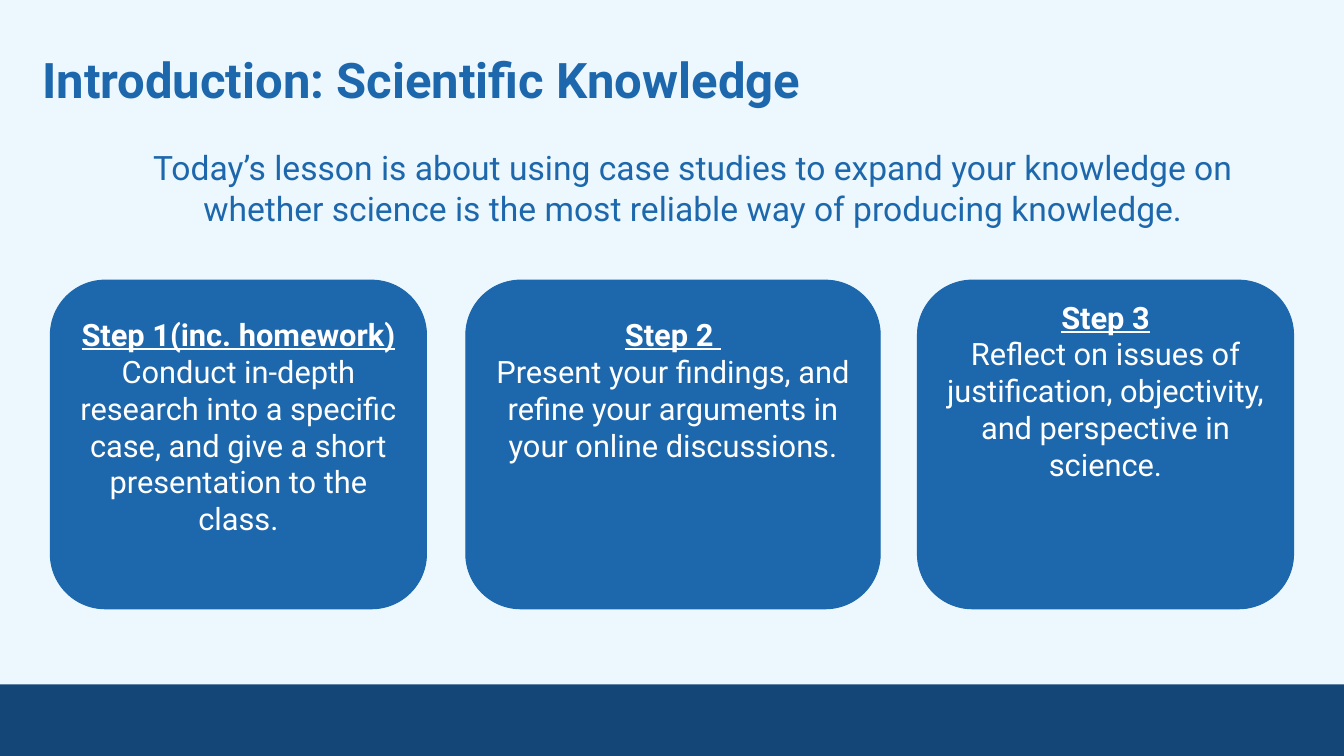
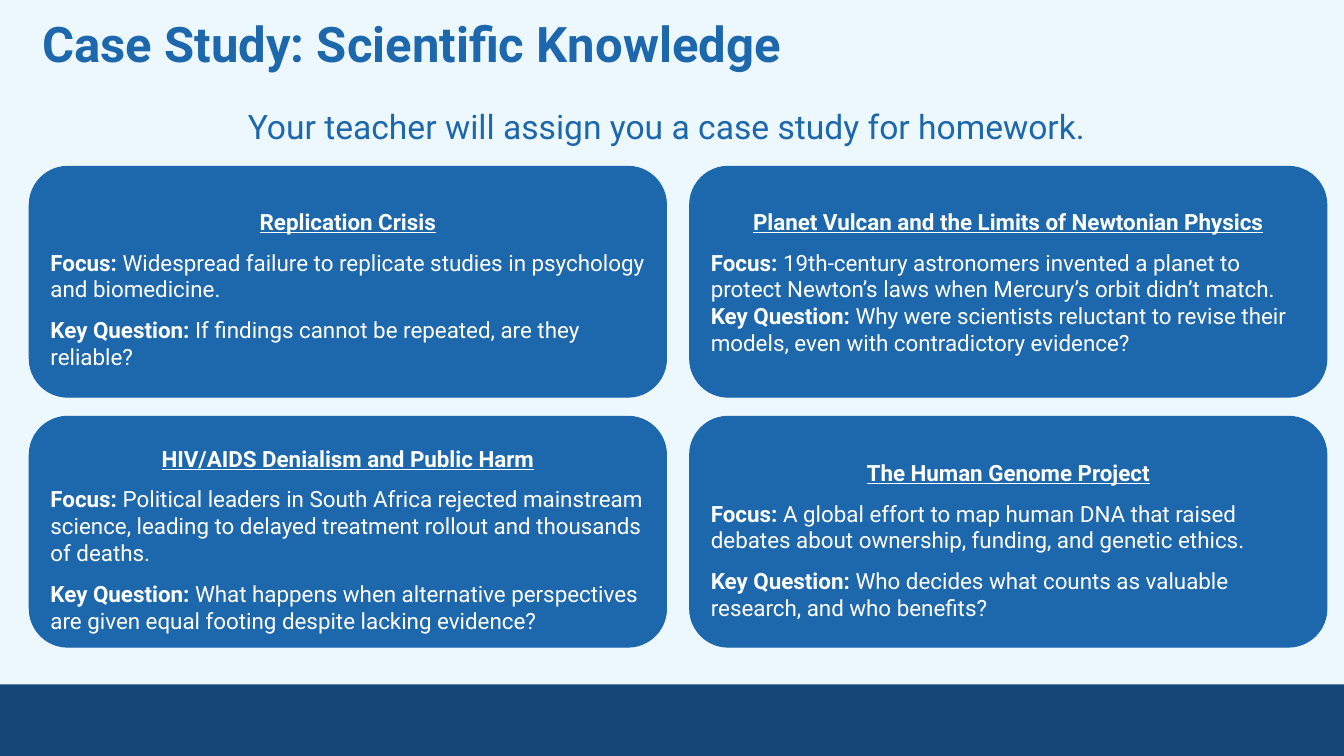
from pptx import Presentation
from pptx.dml.color import RGBColor
from pptx.enum.shapes import MSO_SHAPE as Shape
from pptx.enum.text import MSO_ANCHOR as Anchor, MSO_AUTO_SIZE as AutoSize, PP_ALIGN as Align
from pptx.util import Inches, Pt

FONT = "Roboto"
COLORS = {name: RGBColor.from_string(value) for name, value in {
    "background": "ECF8FE", "blue": "1D67AC", "band": "144777", "white": "FFFFFF",
}.items()}
MARGIN = Inches(0.1)

STEPS = [  # left, width, top inset, heading, text
    (0.5, 3.73, 0.19, "Step 1(inc. homework)",
     "Conduct in-depth research into a specific case, and give a short presentation to the class."),
    (4.62, 4.11, 0.19, "Step 2 ",
     "Present your findings, and refine your arguments in your online discussions."),
    (9.1, 3.73, 0.02, "Step 3",
     "Reflect on issues of justification, objectivity, and perspective in science."),
]

CASES = [  # top inset, space before the question, heading, focus, key question
    (0.3, 10, "Replication Crisis",
     "Widespread failure to replicate studies in psychology and biomedicine.",
     "If findings cannot be repeated, are they reliable?"),
    (0.3, 0, "Planet Vulcan and the Limits of Newtonian Physics",
     "19th-century astronomers invented a planet to protect Newton’s laws "
     "when Mercury’s orbit didn’t match.",
     "Why were scientists reluctant to revise their models, even with contradictory evidence?"),
    (0.17, 10, "HIV/AIDS Denialism and Public Harm",
     "Political leaders in South Africa rejected mainstream science, "
     "leading to delayed treatment rollout and thousands of deaths.",
     "What happens when alternative perspectives are given equal footing "
     "despite lacking evidence?"),
    (0.31, 10, "The Human Genome Project",
     "A global effort to map human DNA that raised debates about ownership, "
     "funding, and genetic ethics.",
     "Who decides what counts as valuable research, and who benefits?"),
]


def add_page(title, title_top, title_width, intro, intro_left, intro_top, intro_height):
    """Add a slide with the footer band, the title and the introductory text."""
    page = deck.slides.add_slide(deck.slide_layouts[5])
    band = page.shapes.add_shape(
        Shape.RECTANGLE, Inches(-0.02), Inches(6.79), Inches(13.37), Inches(0.71))
    band.shadow.inherit = False
    band.fill.solid()
    band.fill.fore_color.rgb = COLORS["band"]
    band.line.fill.background()

    title_box = page.shapes.title
    title_box.left, title_box.top = Inches(0.29), Inches(title_top)
    title_box.width, title_box.height = Inches(title_width), Inches(0.86)
    intro_box = page.shapes.add_textbox(
        Inches(intro_left), Inches(intro_top), Inches(11.92), Inches(intro_height))
    for box, text, size, bold, align, margin in (
            (title_box, title, 35, True, Align.LEFT, Inches(0.13)),
            (intro_box, intro, 24, False, Align.CENTER, MARGIN)):
        frame = box.text_frame
        frame.text = text
        frame.word_wrap = True
        frame.auto_size = AutoSize.NONE
        frame.margin_left = frame.margin_right = margin
        frame.margin_top = frame.margin_bottom = margin
        para = frame.paragraphs[0]
        para.alignment = align
        para.font.name, para.font.size, para.font.bold = FONT, Pt(size), bold
        para.font.color.rgb = COLORS["blue"]
    title_box.text_frame.vertical_anchor = Anchor.MIDDLE
    return page


def add_card(page, left, top, width, height, inset, size, heading, body):
    """Add a rounded card; body holds (label, text, alignment, space before)."""
    card = page.shapes.add_shape(
        Shape.ROUNDED_RECTANGLE, Inches(left), Inches(top), Inches(width), Inches(height))
    card.adjustments[0] = 0.167
    card.shadow.inherit = False
    card.fill.solid()
    card.fill.fore_color.rgb = card.line.color.rgb = COLORS["blue"]
    card.line.width = Pt(0.75)
    frame = card.text_frame
    frame.word_wrap = True
    frame.vertical_anchor = Anchor.TOP
    frame.margin_left = frame.margin_right = frame.margin_bottom = MARGIN
    frame.margin_top = Inches(inset)

    title = frame.paragraphs[0]
    title.text = heading
    title.alignment = Align.CENTER
    title.font.bold = title.font.underline = True
    for label, text, align, space in body:
        para = frame.add_paragraph()
        para.alignment = align
        para.space_before = Pt(space)
        if label:
            span = para.add_run()
            span.text = label
            span.font.bold = True
        para.add_run().text = text
    for para in frame.paragraphs:
        para.font.name, para.font.size = FONT, Pt(size)
        para.font.color.rgb = COLORS["white"]


deck = Presentation()
deck.slide_width, deck.slide_height = Inches(13.33), Inches(7.5)
background = deck.slide_master.background.fill
background.solid()
background.fore_color.rgb = COLORS["background"]

# Introduction
page = add_page(
    "Introduction: Scientific Knowledge", 0.35, 12.19,
    "Today’s lesson is about using case studies to expand your knowledge on "
    "whether science is the most reliable way of producing knowledge.", 0.91, 1.36, 1.2)
for left, width, inset, heading, text in STEPS:
    add_card(page, left, 2.78, width, 3.26, inset, 22, heading,
             [("", text, Align.CENTER, 0)])

# Case studies
page = add_page(
    "Case Study: Scientific Knowledge", 0, 12.99,
    "Your teacher will assign you a case study for homework.", 0.65, 0.95, 0.61)
for index, (inset, space, heading, focus, question) in enumerate(CASES):
    row, column = divmod(index, 2)
    add_card(page, 0.29 + column * 6.55, 1.65 + row * 2.48, 6.32, 2.29, inset, 16, heading,
             [("Focus: ", focus, Align.LEFT, 10),
              ("Key Question: ", question, Align.LEFT, space)])

deck.save("out.pptx")
